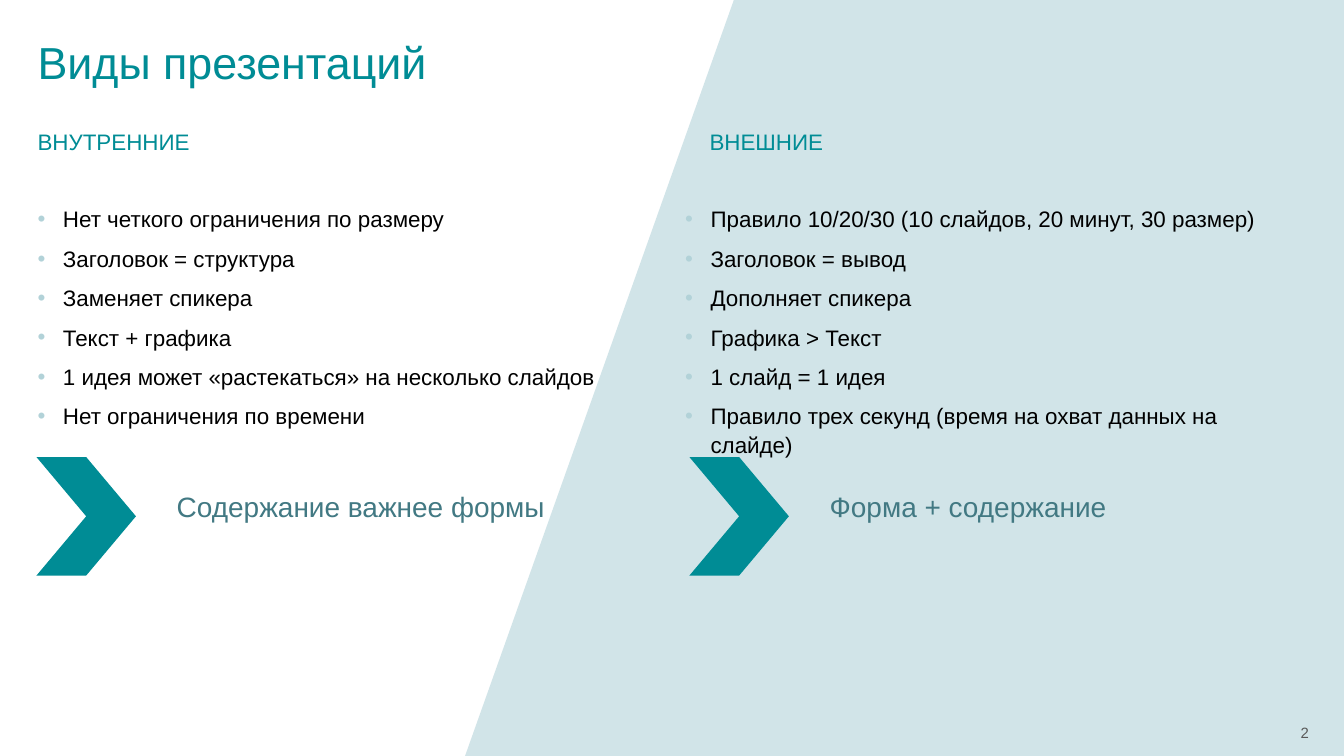
from lxml import etree
from pptx import Presentation
from pptx.dml.color import RGBColor
from pptx.enum.shapes import MSO_SHAPE
from pptx.enum.text import MSO_ANCHOR, MSO_AUTO_SIZE, PP_ALIGN
from pptx.oxml.ns import qn
from pptx.util import Cm, Pt

CHEVRON = MSO_SHAPE.CHEVRON
TOP, MIDDLE = MSO_ANCHOR.TOP, MSO_ANCHOR.MIDDLE
LEFT, RIGHT = PP_ALIGN.LEFT, PP_ALIGN.RIGHT
FIXED, GROW = MSO_AUTO_SIZE.NONE, MSO_AUTO_SIZE.SHAPE_TO_FIT_TEXT

SLIDE_WIDTH, SLIDE_HEIGHT = 25.4, 14.29
TITLE_ONLY = 5
BODY_INSETS = (0, 0.1, 0.23, 0.1)
CAPTION_INSETS = (0.25, 0.13, 0.25, 0.13)


def color(hex_string):
    return RGBColor.from_string(hex_string)


class SlideBuilder:
    FONT = "Arial"
    TEAL = "008C95"
    PANEL = "D1E4E8"
    BULLET = "B2D2D8"
    CAPTION = "427983"
    BODY = "000000"
    MUTED = "595959"

    def __init__(self, slide):
        self.slide = slide

    def paint(self, shape, fill):
        shape.shadow.inherit = False
        shape.fill.solid()
        shape.fill.fore_color.rgb = color(fill)
        shape.line.fill.background()

    def panel(self, points):
        """Draw a filled polygon behind everything else on the slide."""
        corners = [(Cm(x), Cm(y)) for x, y in points]
        builder = self.slide.shapes.build_freeform(*corners[0])
        builder.add_line_segments(corners[1:], close=True)
        shape = builder.convert_to_shape()
        self.paint(shape, self.PANEL)
        self.slide.shapes.title.element.addprevious(shape.element)

    def format_frame(self, frame, insets, anchor=TOP, auto_size=FIXED):
        frame.word_wrap = True
        frame.auto_size = auto_size
        frame.vertical_anchor = anchor
        (frame.margin_left, frame.margin_top,
         frame.margin_right, frame.margin_bottom) = map(Cm, insets)

    def format_paragraph(self, paragraph, size, text_color, align=LEFT):
        paragraph.alignment = align
        paragraph.font.name = self.FONT
        paragraph.font.size = Pt(size)
        paragraph.font.color.rgb = color(text_color)

    def title(self, text, left, top, width, height):
        title = self.slide.shapes.title
        title.left, title.top = Cm(left), Cm(top)
        title.width, title.height = Cm(width), Cm(height)
        title.text_frame.text = text
        self.format_frame(title.text_frame, (0, 0, 0, 0))
        paragraph = title.text_frame.paragraphs[0]
        paragraph.line_spacing = 1.1
        self.format_paragraph(paragraph, 24, self.TEAL)

    def text(self, lines, box, size, text_color, insets=(0, 0, 0, 0),
             anchor=TOP, align=LEFT, auto_size=FIXED, body=False, bullets=False):
        """Add a text box; body sets paragraph spacing, bullets adds markers."""
        frame = self.slide.shapes.add_textbox(*map(Cm, box)).text_frame
        self.format_frame(frame, insets, anchor, auto_size)
        frame.text = "\n".join(lines)
        for paragraph in frame.paragraphs:
            if body:
                paragraph.line_spacing = 1.05
                paragraph.space_after = Pt(6)
            if bullets:
                self.bullet(paragraph)
            self.format_paragraph(paragraph, size, text_color, align)

    def bullet(self, paragraph):
        properties = paragraph._p.get_or_add_pPr()
        properties.set("marL", str(Cm(0.48)))
        properties.set("indent", str(-Cm(0.48)))
        bullet_color = etree.SubElement(properties, qn("a:buClr"))
        etree.SubElement(bullet_color, qn("a:srgbClr"), val=self.BULLET)
        etree.SubElement(properties, qn("a:buFont"), typeface=self.FONT)
        etree.SubElement(properties, qn("a:buChar"), char="•")

    def chevron(self, left, top, width, height):
        shape = self.slide.shapes.add_shape(
            CHEVRON, Cm(left), Cm(top), Cm(width), Cm(height))
        self.paint(shape, self.TEAL)

    def column(self, heading, heading_left, items, items_left,
               conclusion, chevron_left, conclusion_width):
        self.text([heading], (heading_left, 2.29, 11.73, 1.24), 12, self.TEAL,
                  BODY_INSETS, body=True)
        self.text(items, (items_left, 3.76, 11.73, 9.19), 12, self.BODY,
                  BODY_INSETS, body=True, bullets=True)
        self.chevron(chevron_left, 8.64, 1.88, 2.24)
        self.text([conclusion], (chevron_left + 2.4, 9.12, conclusion_width, 0.89),
                  15, self.CAPTION, CAPTION_INSETS, auto_size=GROW)


def main():
    presentation = Presentation()
    presentation.slide_width = Cm(SLIDE_WIDTH)
    presentation.slide_height = Cm(SLIDE_HEIGHT)
    layout = presentation.slide_layouts[TITLE_ONLY]
    builder = SlideBuilder(presentation.slides.add_slide(layout))

    builder.panel([(13.87, 0), (SLIDE_WIDTH, 0),
                   (SLIDE_WIDTH, SLIDE_HEIGHT), (8.79, SLIDE_HEIGHT)])
    builder.title("Виды презентаций", 0.71, 0.56, 23.98, 1.47)
    builder.column(
        "ВНУТРЕННИЕ", 0.71,
        ["Нет четкого ограничения по размеру",
         "Заголовок = структура",
         "Заменяет спикера",
         "Текст + графика",
         "1 идея может «растекаться» на несколько слайдов",
         "Нет ограничения по времени"], 0.71,
        "Содержание важнее формы", 0.69, 7.98)
    builder.column(
        "ВНЕШНИЕ", 13.41,
        ["Правило 10/20/30 (10 слайдов, 20 минут, 30 размер)",
         "Заголовок = вывод",
         "Дополняет спикера",
         "Графика > Текст",
         "1 слайд = 1 идея",
         "Правило трех секунд (время на охват данных на слайде)"], 12.95,
        "Форма + содержание", 13.03, 5.94)
    builder.text(["2"], (23.93, 13.61, 0.81, 0.48), 8, builder.MUTED,
                 anchor=MIDDLE, align=RIGHT)

    presentation.save("out.pptx")


if __name__ == "__main__":
    main()
